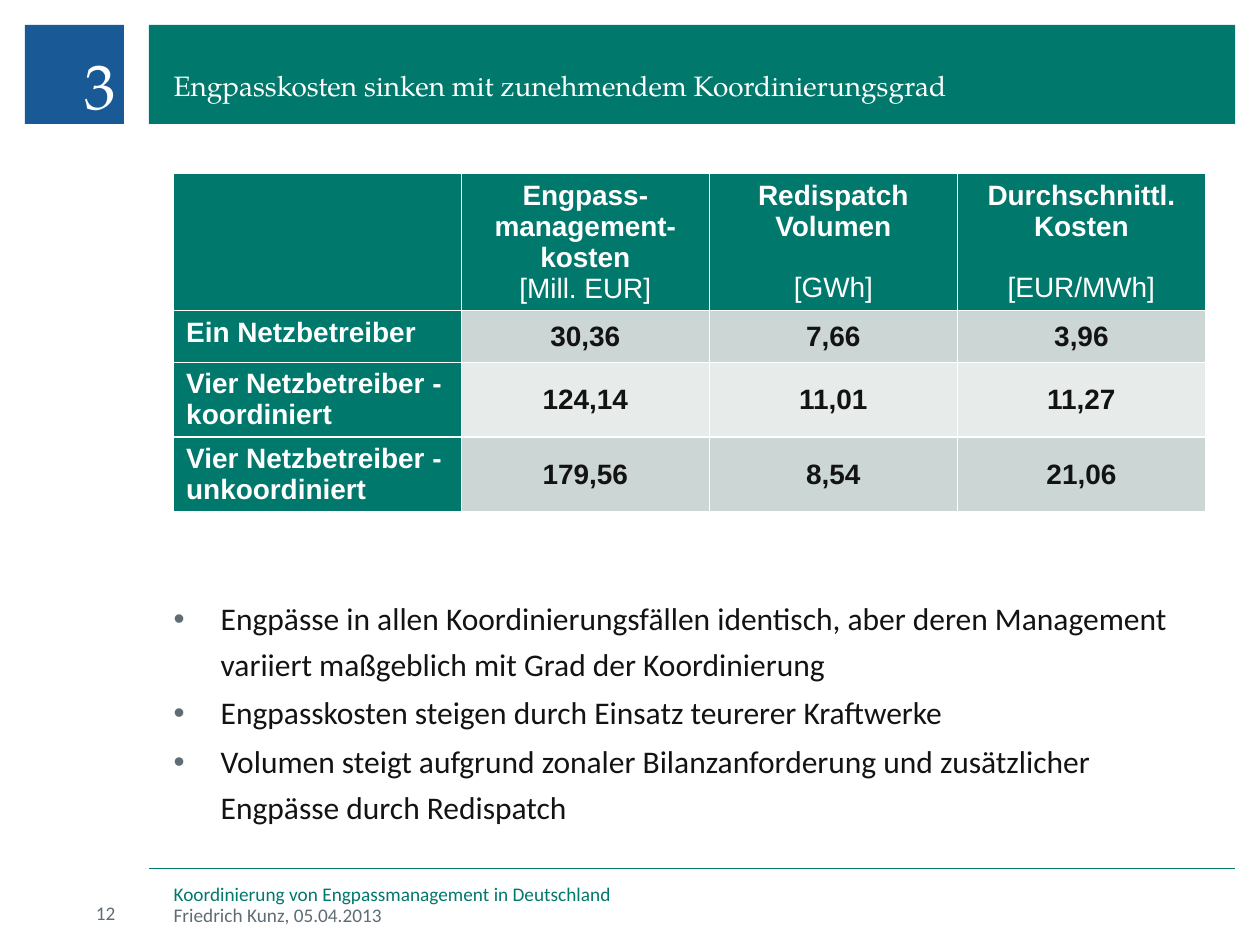
from lxml import etree
from pptx import Presentation
from pptx.dml.color import RGBColor
from pptx.enum import shapes, text
from pptx.oxml import ns
from pptx.util import Cm, Pt

GREEN, BLUE, GREY, INK, WHITE = "00786B", "195A96", "5F6C73", "131313", "FFFFFF"
BANDS = ("CCD6D4", "E7ECEB")
SERIF, SANS, TABLE_FONT = "TeX Gyre Pagella", "Calibri", "Arial"
LEFT, RIGHT, CENTER = text.PP_ALIGN.LEFT, text.PP_ALIGN.RIGHT, text.PP_ALIGN.CENTER
TOP, MIDDLE, BOTTOM = (text.MSO_ANCHOR.TOP, text.MSO_ANCHOR.MIDDLE,
                       text.MSO_ANCHOR.BOTTOM)

HEADERS = [("Engpass-management-kosten", "[Mill. EUR]", 0),
           ("Redispatch Volumen", "[GWh]", 17),
           ("Durchschnittl. Kosten", "[EUR/MWh]", 17)]
ROWS = [("Ein Netzbetreiber", "30,36", "7,66", "3,96"),
        ("Vier Netzbetreiber - koordiniert", "124,14", "11,01", "11,27"),
        ("Vier Netzbetreiber - unkoordiniert", "179,56", "8,54", "21,06")]
BULLETS = [
    "Engpässe in allen Koordinierungsfällen identisch, aber deren Management "
    "variiert maßgeblich mit Grad der Koordinierung",
    "Engpasskosten steigen durch Einsatz teurerer Kraftwerke",
    "Volumen steigt aufgrund zonaler Bilanzanforderung und zusätzlicher "
    "Engpässe durch Redispatch",
]


def color(value):
    return RGBColor.from_string(value)


def add_xml(parent, tag, **attributes):
    return etree.SubElement(parent, ns.qn(tag), attributes)


class SlideBuilder:
    def __init__(self, page):
        self.page = page

    def style(self, para, size, font, ink, align=LEFT, bold=False):
        para.alignment = align
        for span in para.runs:
            span.font.size, span.font.name, span.font.bold = Pt(size), font, bold
            span.font.color.rgb = color(ink)

    def frame(self, box, anchor=TOP, wrap=True):
        frame = box.text_frame
        frame.margin_left = frame.margin_right = 0
        frame.margin_top = frame.margin_bottom = 0
        frame.vertical_anchor, frame.word_wrap = anchor, wrap
        frame.auto_size = text.MSO_AUTO_SIZE.NONE
        return frame

    def block(self, left, top, width, height, fill):
        box = self.page.shapes.add_shape(shapes.MSO_SHAPE.RECTANGLE, Cm(left),
                                         Cm(top), Cm(width), Cm(height))
        box.shadow.inherit = False
        box.fill.solid()
        box.fill.fore_color.rgb = color(fill)
        box.line.fill.background()

    def rule(self, left, right, top, ink):
        line = self.page.shapes.add_connector(shapes.MSO_CONNECTOR.STRAIGHT,
                                              Cm(left), Cm(top), Cm(right), Cm(top))
        line.line.color.rgb, line.line.width = color(ink), Pt(0.5)
        add_xml(line._element.spPr, "a:effectLst")

    def title(self, words, left, top, width, height):
        box = self.page.shapes.title
        box.left, box.top, box.width, box.height = map(Cm, (left, top, width, height))
        frame = self.frame(box, BOTTOM, wrap=False)
        frame.text = words
        self.style(frame.paragraphs[0], 16, SERIF, WHITE)
        frame.paragraphs[0].space_after = Pt(2)
        self.page.shapes.element.append(box.element)  # in front of the band

    def label(self, words, left, top, width, height, size, font, ink,
              align=LEFT, anchor=TOP):
        box = self.page.shapes.add_textbox(Cm(left), Cm(top), Cm(width), Cm(height))
        frame = self.frame(box, anchor)
        frame.text = words
        self.style(frame.paragraphs[0], size, font, ink, align)
        return frame

    def bullets(self, items, left, top, width, height):
        frame = self.label("\n".join(items), left, top, width, height, 18, SANS, INK)
        frame.margin_top = frame.margin_right = Cm(0.2)
        for para in frame.paragraphs:
            para.line_spacing, para.space_after = 1.2, Pt(2)
            props = para._p.get_or_add_pPr()
            indent = Cm(0.95)
            props.set("marL", str(indent))
            props.set("indent", str(-indent))
            add_xml(add_xml(props, "a:buClr"), "a:srgbClr", val=GREY)
            add_xml(props, "a:buFont", typeface="Arial")
            add_xml(props, "a:buChar", char="•")
            self.style(para, 18, SANS, INK)

    def cell(self, cell, words, fill, ink=WHITE, align=CENTER, anchor=TOP):
        cell.fill.solid()
        cell.fill.fore_color.rgb = color(fill)
        cell.vertical_anchor = anchor
        cell.text_frame.text = words
        for para in cell.text_frame.paragraphs:
            self.style(para, 16, TABLE_FONT, ink, align, bold=True)

    def table(self, left, top, widths, heights):
        table = self.page.shapes.add_table(
            len(heights), len(widths), Cm(left), Cm(top),
            Cm(sum(widths)), Cm(sum(heights))).table
        for column, width in zip(table.columns, widths):
            column.width = Cm(width)
        for row, height in zip(table.rows, heights):
            row.height = Cm(height)

        # Header row: bold name, plain unit
        self.cell(table.cell(0, 0), "", GREEN)
        for c, (name, unit, gap) in enumerate(HEADERS, 1):
            self.cell(table.cell(0, c), f"{name}\n{unit}", GREEN)
            unit_para = table.cell(0, c).text_frame.paragraphs[1]
            unit_para.space_before = Pt(gap)
            unit_para.runs[0].font.bold = False

        # Body rows in alternating bands
        for r, (name, *values) in enumerate(ROWS, 1):
            self.cell(table.cell(r, 0), name, GREEN, align=LEFT)
            for c, value in enumerate(values, 1):
                self.cell(table.cell(r, c), value, BANDS[(r - 1) % 2], INK,
                          anchor=MIDDLE)


def main():
    deck = Presentation()
    deck.slide_width, deck.slide_height = Cm(25.4), Cm(19.05)
    slide = SlideBuilder(deck.slides.add_slide(deck.slide_layouts[5]))

    # Header band with section number
    slide.block(0.5, 0.5, 2, 2, BLUE)
    slide.block(3, 0.5, 21.9, 2, GREEN)
    slide.title("Engpasskosten sinken mit zunehmendem Koordinierungsgrad",
                3.5, 0.84, 20.75, 1.22)
    number = slide.label("3", 0.43, 0.64, 1.9, 1.9, 36, SERIF, WHITE, RIGHT)
    number.paragraphs[0].line_spacing = 1.2

    # Content
    slide.table(3.5, 3.5, [5.8, 5, 5, 5], [2.74, 1.04, 1.5, 1.5])
    slide.bullets(BULLETS, 3.5, 11.73, 20.83, 4.8)

    # Footer
    slide.rule(3, 24.9, 17.5, GREEN)
    slide.label("Koordinierung von Engpassmanagement in Deutschland",
                3.5, 17.78, 16.93, 0.43, 11, SANS, GREEN)
    slide.label("Friedrich Kunz, 05.04.2013", 3.5, 18.21, 16.93, 0.43, 11, SANS, GREY)
    slide.label("12", 0.43, 18.16, 1.9, 0.5, 11, SANS, GREY, RIGHT, MIDDLE)

    deck.save("out.pptx")


if __name__ == "__main__":
    main()
